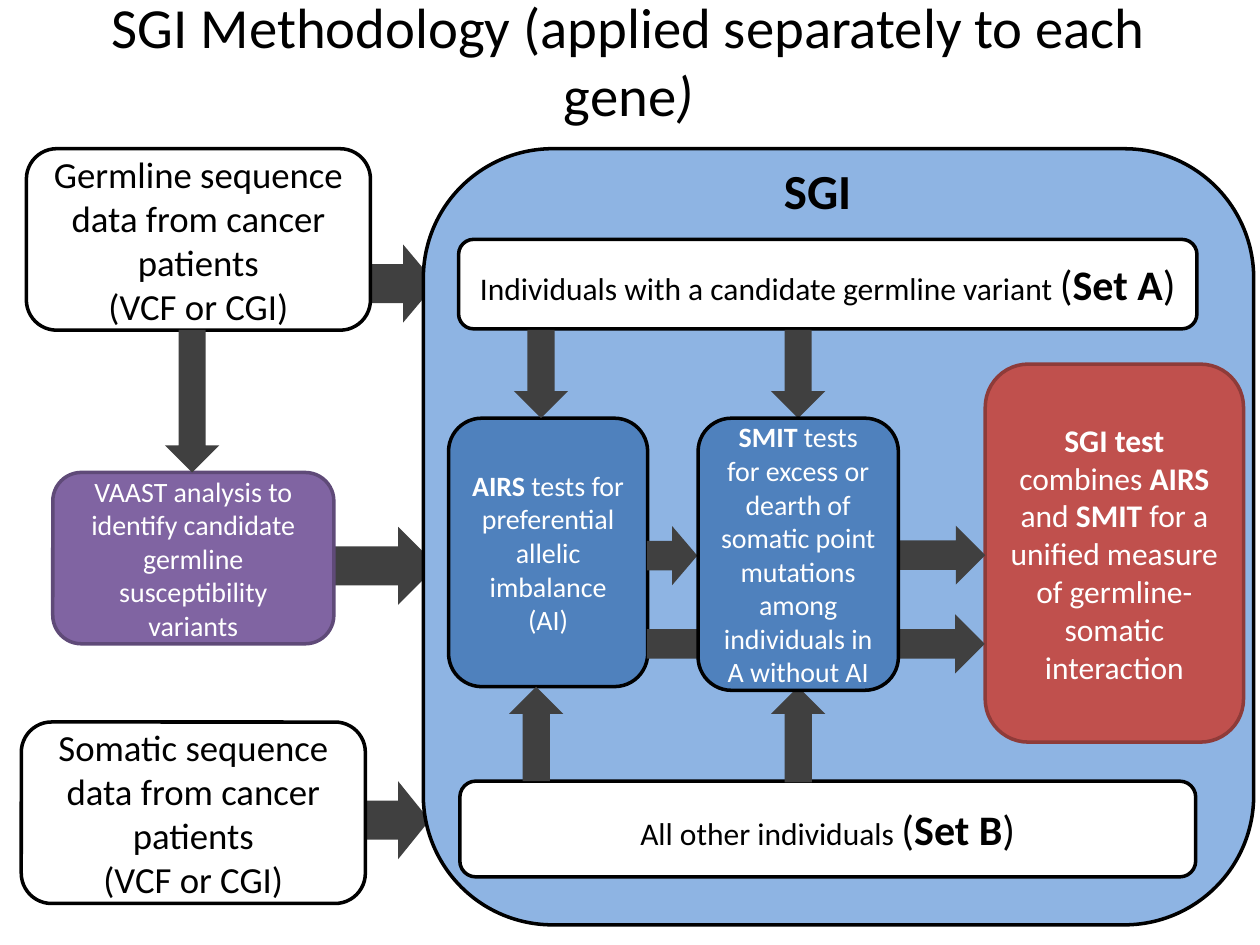
"""Build the SGI methodology flow slide."""
from pptx import Presentation, util as u
from pptx.dml.color import RGBColor
from pptx.enum import shapes, text

COLORS = {"black": "000000", "white": "FFFFFF", "arrow": "404040", "panel": "8EB4E3",
          "blue": "4F81BD", "purple": "8064A2", "purple edge": "5F4A78",
          "red": "C0504D", "red edge": "8E3B39"}
FONT = "Calibri"
PLAIN, BOLD, ITALIC = {}, {"bold": True}, {"italic": True}
DOWN, UP, RIGHT = 0, 180, 270

TITLE = ((17.3, 3.6, 684, 61.2), 32.4,
         [[("SGI Methodology (applied separately to each gene", PLAIN), (")", ITALIC)]])
PANEL_LABEL = ((440.6, 87.8, 53.3, 41), 28, [[("SGI", BOLD)]])

PANEL = ((241.9, 85, 474.5, 443.5), "panel", "black", "black", 18, [])
SMIT = ((398.9, 239, 114.5, 155.5), "blue", "black", "white", 16,
        [[("SMIT ", BOLD),
          ("tests for excess or dearth of somatic point mutations among individuals in A without AI",
           PLAIN)]])


def sequence_data(kind, left, top):
    lines = [f"{kind} sequence data from cancer patients", "(VCF or CGI)"]
    return ((left, top, 196.6, 103.7), "white", "black", "black", 21,
            [[(line, PLAIN)] for line in lines])


def individuals(frame, description, name):
    large = {"size": u.Pt(24)}
    return (frame, "white", "black", "black", 18,
            [[(description, PLAIN), ("(", large), (name, large | BOLD), (")", large)]])


STEPS = [
    ((256.3, 239, 113.8, 153.4), "blue", "black", "white", 16,
     [[("AIRS", BOLD), (" tests for preferential allelic imbalance (AI)", PLAIN)]]),
    individuals((262.1, 136.8, 421.9, 51.1),
                "Individuals with a candidate germline variant ", "Set A"),
    individuals((262.8, 446.4, 420.5, 54.7), "All other individuals ", "Set B"),
    sequence_data("Germline", 15.1, 85),
    ((30.2, 270, 160.6, 97.9), "purple", "purple edge", "white", 16,
     [[("VAAST analysis to identify candidate germline susceptibility variants", PLAIN)]]),
    sequence_data("Somatic", 12.2, 412.6),
    ((563, 208.1, 147.6, 216), "red", "red edge", "white", 18,
     [[("SGI test", BOLD), (" combines ", PLAIN), ("AIRS", BOLD), (" and ", PLAIN),
       ("SMIT", BOLD), (" for a unified measure of germline-somatic interaction", PLAIN)]]),
]

# Each arrow: centre x, centre y, breadth, length, direction
INPUT_ARROWS = [(227.5, 468.7, 44.6, 36, RIGHT), (220.3, 323.3, 44.6, 59, RIGHT),
                (230.4, 162, 44.6, 37.4, RIGHT)]
STEP_ARROWS = [(309.2, 213.8, 31, 50.4, DOWN), (456.1, 213.8, 31, 50.4, DOWN),
               (109.8, 229.3, 31, 81.4, DOWN), (306.4, 419.4, 31, 54, UP),
               (456.1, 419.8, 31, 54.7, UP), (538.2, 317.2, 33.8, 49.7, RIGHT),
               (466.2, 367.9, 33.8, 193, RIGHT), (384.1, 317.5, 33.8, 28.8, RIGHT)]


def color(name):
    return RGBColor.from_string(COLORS[name])


def set_all(target, values):
    for name, value in values.items():
        setattr(target, name, value)


def write(box, paragraphs, size, ink, wrap=True):
    frame = box.text_frame
    set_all(frame, {"word_wrap": wrap, "vertical_anchor": text.MSO_ANCHOR.MIDDLE})
    for index, spans in enumerate(paragraphs):
        para = frame.add_paragraph() if index else frame.paragraphs[0]
        para.alignment = text.PP_ALIGN.CENTER
        for words, style in spans:
            span = para.add_run()
            span.text = words
            set_all(span.font, {"name": FONT, "size": u.Pt(size), "bold": False} | style)
            span.font.color.rgb = color(ink)


def add_filled(page, preset, frame, fill):
    shape = page.shapes.add_shape(preset, *map(u.Pt, frame))
    shape.shadow.inherit = False
    shape.fill.solid()
    shape.fill.fore_color.rgb = color(fill)
    return shape


def add_box(page, frame, fill, edge, ink, size, paragraphs):
    box = add_filled(page, shapes.MSO_SHAPE.ROUNDED_RECTANGLE, frame, fill)
    box.line.color.rgb = color(edge)
    box.line.width = u.Pt(2)
    write(box, paragraphs, size, ink)


def add_arrow(page, x, y, breadth, length, direction):
    frame = (x - breadth / 2, y - length / 2, breadth, length)
    arrow = add_filled(page, shapes.MSO_SHAPE.DOWN_ARROW, frame, "arrow")
    arrow.line.fill.background()
    arrow.rotation = direction


def add_label(page, frame, size, paragraphs, wrap):
    box = page.shapes.add_textbox(*map(u.Pt, frame))
    write(box, paragraphs, size, "black", wrap)


def main():
    deck = Presentation()
    set_all(deck, {"slide_width": u.Pt(720), "slide_height": u.Pt(540)})
    page = deck.slides.add_slide(deck.slide_layouts[6])
    for arrow in INPUT_ARROWS:
        add_arrow(page, *arrow)
    add_box(page, *PANEL)
    add_label(page, *TITLE, wrap=True)
    add_label(page, *PANEL_LABEL, wrap=False)
    for step in STEPS:
        add_box(page, *step)
    for arrow in STEP_ARROWS:
        add_arrow(page, *arrow)
    add_box(page, *SMIT)
    deck.save("out.pptx")


if __name__ == "__main__":
    main()
